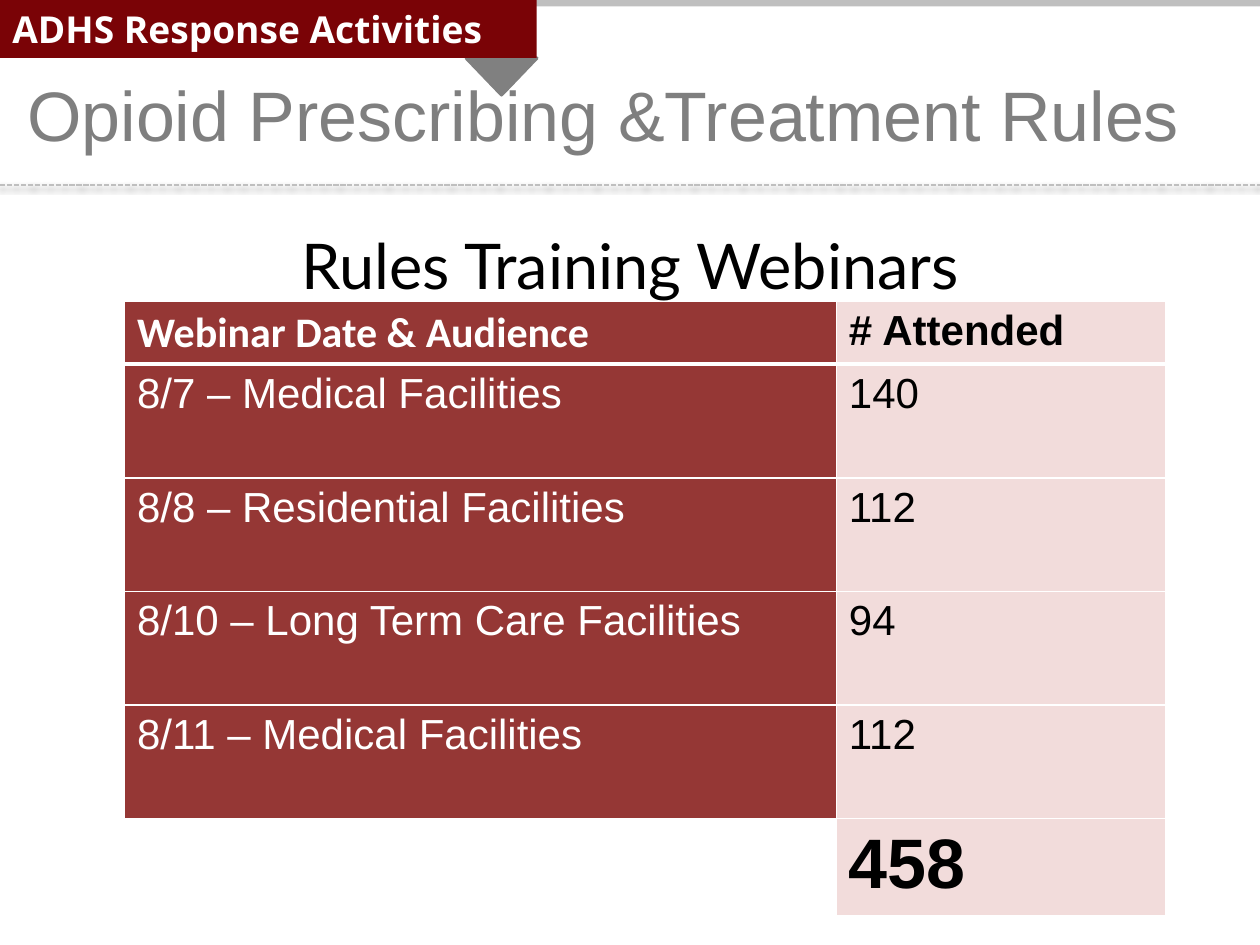
from lxml import etree
from pptx import Presentation
from pptx.dml.color import RGBColor
from pptx.enum.dml import MSO_LINE
from pptx.enum.shapes import MSO_CONNECTOR, MSO_SHAPE
from pptx.enum.text import MSO_ANCHOR, PP_ALIGN
from pptx.oxml import parse_xml
from pptx.util import Cm, Pt

DASH = MSO_LINE.SQUARE_DOT
STRAIGHT = MSO_CONNECTOR.STRAIGHT
RECT = MSO_SHAPE.RECTANGLE
WEDGE = MSO_SHAPE.ISOSCELES_TRIANGLE
TOP, MIDDLE = MSO_ANCHOR.TOP, MSO_ANCHOR.MIDDLE
LEFT, CENTER = PP_ALIGN.LEFT, PP_ALIGN.CENTER

WHITE = RGBColor(0xFF, 0xFF, 0xFF)
BLACK = RGBColor(0x00, 0x00, 0x00)
GRAY = RGBColor(0x80, 0x80, 0x80)
SILVER = RGBColor(0xBF, 0xBF, 0xBF)
SLATE = RGBColor(0x7F, 0x7F, 0x7F)
MAROON = RGBColor(0x7A, 0x03, 0x06)
BRICK = RGBColor(0x95, 0x37, 0x35)
PINK = RGBColor(0xF2, 0xDC, 0xDB)

NS = "http://schemas.openxmlformats.org/drawingml/2006/main"
WIDE = 25.4
ROWS = [
    ("Webinar Date & Audience", "# Attended"),
    ("8/7 – Medical Facilities", "140"),
    ("8/8 – Residential Facilities", "112"),
    ("8/10 – Long Term Care Facilities", "94"),
    ("8/11 – Medical Facilities", "112"),
    ("", "458"),
]
COLS = [14.35, 6.65]
HEIGHTS = [1.27] + [2.29] * 4 + [1.96]


def write(frame, text, size=24, face="Arial", color=BLACK, bold=False,
          align=LEFT, anchor=TOP):
    frame.word_wrap = True
    frame.vertical_anchor = anchor
    para = frame.paragraphs[0]
    para.alignment = align
    run = para.add_run()
    run.text = text
    font = run.font
    font.size, font.name, font.bold = Pt(size), face, bold
    font.color.rgb = color


def add_block(slide, kind, box, fill):
    shape = slide.shapes.add_shape(kind, *map(Cm, box))
    shape.shadow.inherit = False
    shape.fill.solid()
    shape.fill.fore_color.rgb = fill
    shape.line.fill.background()
    return shape


def add_rule(slide, y):
    rule = slide.shapes.add_connector(STRAIGHT, Cm(0), Cm(y), Cm(WIDE), Cm(y))
    rule.line.color.rgb = SILVER
    rule.line.width = Pt(1)
    rule.line.dash_style = DASH
    rule.element.spPr.append(parse_xml(
        f'<a:effectLst xmlns:a="{NS}">'
        f'<a:outerShdw blurRad="{Pt(3.1)}" dist="{Pt(1.6)}" dir="5400000" '
        'rotWithShape="0"><a:srgbClr val="000000"><a:alpha val="38000"/>'
        '</a:srgbClr></a:outerShdw></a:effectLst>'))


def add_edge(cell, side, width):
    props = cell._tc.get_or_add_tcPr()
    edge = etree.SubElement(props, f"{{{NS}}}ln{side}", w=str(Pt(width)))
    fill = etree.SubElement(edge, f"{{{NS}}}solidFill")
    etree.SubElement(fill, f"{{{NS}}}srgbClr", val=str(WHITE))


def fill_cell(cell, text, row, col):
    last = len(ROWS) - 1
    thick = {(0, "B"), (1, "T")}
    for side in "LRTB":
        add_edge(cell, side, 3 if (row, side) in thick else 1)
    cell.fill.solid()
    cell.fill.fore_color.rgb = PINK if col else WHITE if row == last else BRICK
    if text:
        write(cell.text_frame, text, size=40 if row == last else 24,
              face="Calibri" if row == col == 0 else "Arial",
              color=BLACK if col else WHITE, bold=row in (0, last))


def add_grid(slide):
    frame = slide.shapes.add_table(
        len(ROWS), len(COLS), Cm(2.51), Cm(6.07),
        Cm(sum(COLS)), Cm(sum(HEIGHTS)))
    table = frame.table
    table.horz_banding = False
    for column, width in zip(table.columns, COLS):
        column.width = Cm(width)
    for row, (texts, height) in enumerate(zip(ROWS, HEIGHTS)):
        table.rows[row].height = Cm(height)
        for col, text in enumerate(texts):
            fill_cell(table.cell(row, col), text, row, col)


def set_title(slide):
    title = slide.shapes.title
    title.left, title.top, title.width, title.height = map(
        Cm, (1.27, 3.73, 22.86, 3.18))
    write(title.text_frame, "Rules Training Webinars", size=36, face="Lato",
          align=CENTER, anchor=MIDDLE)
    title.element.getparent().append(title.element)


def main():
    deck = Presentation()
    deck.slide_width, deck.slide_height = Cm(WIDE), Cm(19.05)
    slide = deck.slides.add_slide(deck.slide_layouts[5])

    wedge = add_block(slide, WEDGE, (9.4, 1.17, 1.42, 0.74), GRAY)
    wedge.rotation = 180
    wedge.line.color.rgb = GRAY
    wedge.line.width = Pt(2)
    add_block(slide, RECT, (9.35, 0, 16.05, 0.13), SILVER)
    banner = add_block(slide, RECT, (0, 0, 10.82, 1.17), MAROON)
    write(banner.text_frame, "ADHS Response Activities", size=21.2,
          face="Open Sans", color=WHITE, bold=True)

    add_rule(slide, 3.73)
    head = slide.shapes.add_textbox(Cm(0.3), Cm(1.32), Cm(24.77), Cm(1.96))
    write(head.text_frame, "Opioid Prescribing &Treatment Rules", size=40,
          color=SLATE)
    add_grid(slide)
    set_title(slide)
    deck.save("out.pptx")


if __name__ == "__main__":
    main()
